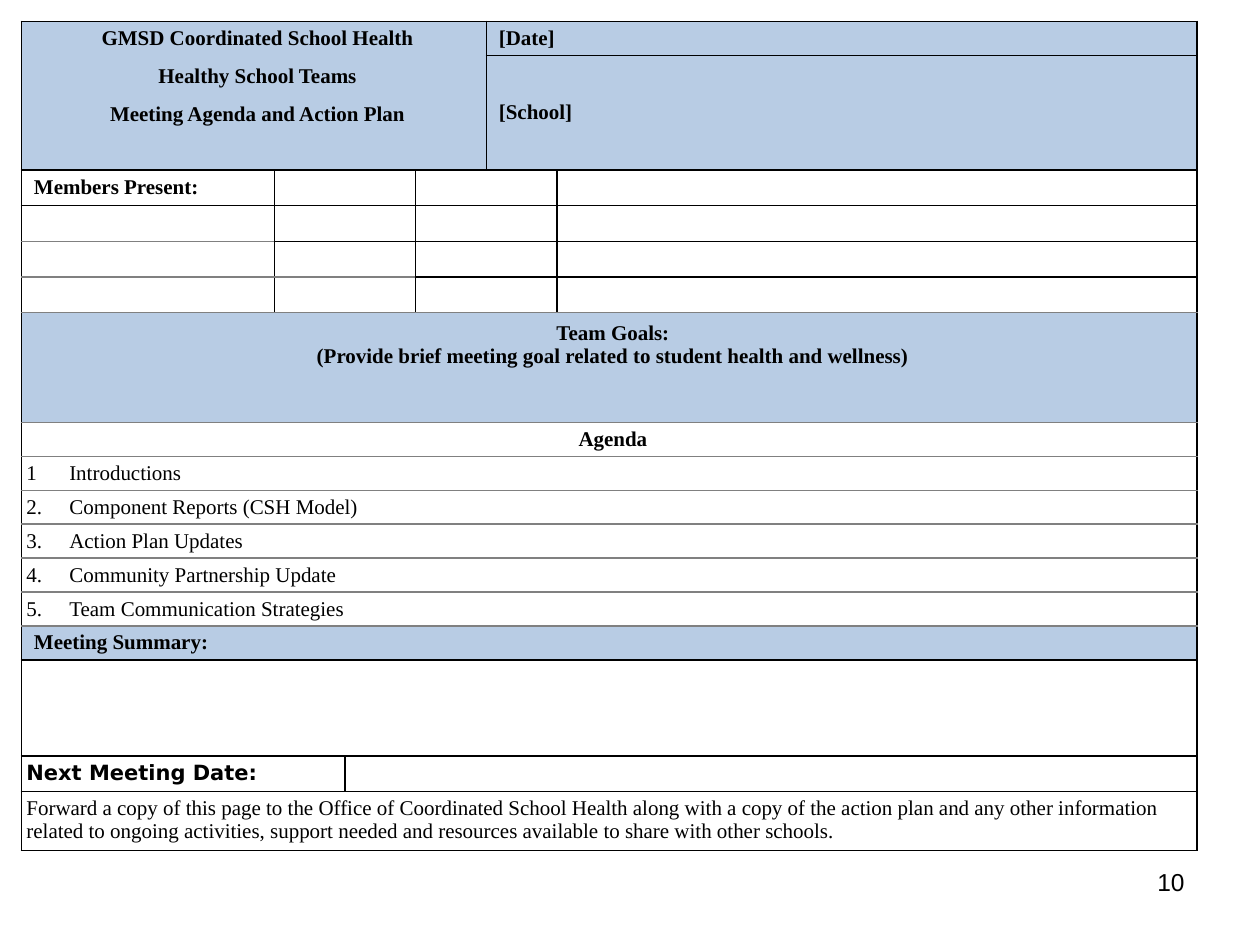
from lxml import etree
from pptx import Presentation
from pptx.dml.color import RGBColor
from pptx.enum.text import MSO_ANCHOR, PP_ALIGN
from pptx.oxml.ns import qn
from pptx.util import Inches, Pt

CENTER, RIGHT = PP_ALIGN.CENTER, PP_ALIGN.RIGHT
TOP, MIDDLE = MSO_ANCHOR.TOP, MSO_ANCHOR.MIDDLE
BLACK = RGBColor(0x00, 0x00, 0x00)
GRAY = RGBColor(0x80, 0x80, 0x80)
BLUE = RGBColor(0xB8, 0xCC, 0xE4)
SERIF = "Times New Roman"

TITLE = ["GMSD Coordinated School Health", "Healthy School Teams",
         "Meeting Agenda and Action Plan"]
GOALS = ["Team Goals:",
         "(Provide brief meeting goal related to student health and wellness)"]
AGENDA = ["1\tIntroductions", "2.\tComponent Reports (CSH Model)",
          "3.\tAction Plan Updates", "4.\tCommunity Partnership Update",
          "5.\tTeam Communication Strategies"]
FORWARD = ("Forward a copy of this page to the Office of Coordinated School Health "
           "along with a copy of the action plan and any other information related "
           "to ongoing activities, support needed and resources available to share "
           "with other schools.")

LEFT = 0.17
WIDTH = 9.33
PAD = 0.04
LINE_ROW = 0.27
TALL_ROWS = {1: 0.91, 6: 0.87, 14: 0.76, 16: 0.47}
ROWS, COLS = 17, 6
NAME_COL, NARROW_COL = 2.01, 0.56
FIRST_MEMBER, LAST_MEMBER = 2, 5
GOALS_ROW, AGENDA_ROW, SUMMARY_ROW = 6, 7, 13
GRAY_COLS = {3: 1, 4: 3, **{row: COLS for row in range(5, SUMMARY_ROW)}}

SPANS = [(0, 0, 2, 4), (0, 4, 1, 2), (1, 4, 1, 2), (15, 0, 1, 2), (15, 2, 1, 4)]
SPANS += [(row, col, 1, 2) for row in range(FIRST_MEMBER, LAST_MEMBER + 1)
          for col in (1, 3)]
SPANS += [(row, 0, 1, COLS) for row in (*range(GOALS_ROW, 15), 16)]

HEADING = dict(indent=0.06, bold=True)
CELLS = [
    (0, 0, TITLE, dict(HEADING, align=CENTER, anchor=TOP, before=4.3, after=4.3)),
    (0, 4, ["[Date]"], HEADING),
    (1, 4, ["[School]"], HEADING),
    (FIRST_MEMBER, 0, ["Members Present:"], HEADING),
    (GOALS_ROW, 0, GOALS, dict(HEADING, align=CENTER, anchor=TOP, top=0.07)),
    (AGENDA_ROW, 0, ["Agenda"], dict(HEADING, align=CENTER)),
    (SUMMARY_ROW, 0, ["Meeting Summary:"], dict(HEADING, anchor=TOP)),
    (15, 0, ["Next Meeting Date:"], dict(bold=True, font="DejaVu Sans", anchor=TOP)),
    (16, 0, [FORWARD], dict(anchor=TOP, before=2.9)),
]
CELLS += [(AGENDA_ROW + i, 0, [item], dict(indent=0.34, hanging=True))
          for i, item in enumerate(AGENDA, 1)]
BLUE_CELLS = {(0, 0), (0, 4), (1, 4), (GOALS_ROW, 0), (SUMMARY_ROW, 0)}


def add_run(p, text, font, size, bold=False):
    r = p.add_run()
    r.text = text
    r.font.name = font
    r.font.size = Pt(size)
    r.font.bold = bold
    r.font.color.rgb = BLACK


def write_cell(cell, lines, indent=0, hanging=False, bold=False, font=SERIF,
               align=None, anchor=MIDDLE, top=PAD, before=0, after=0):
    cell.vertical_anchor = anchor
    cell.margin_top = Inches(top)
    tf = cell.text_frame
    for i, line in enumerate(lines):
        p = tf.add_paragraph() if i else tf.paragraphs[0]
        p.alignment = align
        p.space_before, p.space_after = Pt(before), Pt(after)
        pPr = p._p.get_or_add_pPr()
        pPr.set("marL", str(Inches(indent)))
        pPr.set("indent", str(-Inches(indent) if hanging else 0))
        add_run(p, line, font, 12, bold)


def line_color(row, col):
    return GRAY if col < GRAY_COLS.get(row, 0) else BLACK


def format_cell(cell, row, col):
    cell.margin_left = cell.margin_right = Inches(PAD)
    cell.margin_top = cell.margin_bottom = Inches(PAD)
    end = etree.SubElement(cell.text_frame.paragraphs[0]._p, qn("a:endParaRPr"))
    end.set("sz", "1200")
    tcPr = cell._tc.get_or_add_tcPr()
    borders = {"lnL": BLACK, "lnR": BLACK,
               "lnT": line_color(row - 1, col), "lnB": line_color(row, col)}
    for tag, color in borders.items():
        ln = etree.SubElement(tcPr, qn("a:" + tag), w=str(Pt(1)))
        fill = etree.SubElement(ln, qn("a:solidFill"))
        etree.SubElement(fill, qn("a:srgbClr"), val=str(color))
    if (row, col) in BLUE_CELLS:
        cell.fill.solid()
        cell.fill.fore_color.rgb = BLUE
    else:
        cell.fill.background()


prs = Presentation()
prs.slide_width, prs.slide_height = Inches(10), Inches(7.5)
s = prs.slides.add_slide(prs.slide_layouts[6])

heights = [TALL_ROWS.get(row, LINE_ROW) for row in range(ROWS)]
widths = [NAME_COL] + [NARROW_COL] * 4
widths.append(WIDTH - sum(widths))
table = s.shapes.add_table(ROWS, COLS, Inches(LEFT), Inches(LEFT),
                           Inches(WIDTH), Inches(sum(heights))).table
table.first_row = table.horz_banding = False
for table_row, height in zip(table.rows, heights):
    table_row.height = Inches(height)
for column, width in zip(table.columns, widths):
    column.width = Inches(width)
for row in range(ROWS):
    for col in range(COLS):
        format_cell(table.cell(row, col), row, col)
for row, col, down, across in SPANS:
    table.cell(row, col).merge(table.cell(row + down - 1, col + across - 1))
for row, col, lines, style in CELLS:
    write_cell(table.cell(row, col), lines, **style)

page = s.shapes.add_textbox(Inches(7.17), Inches(6.83), Inches(2.33), Inches(0.52))
page.text_frame.word_wrap = True
p = page.text_frame.paragraphs[0]
p.alignment = RIGHT
add_run(p, "10", "Arial", 14)

prs.save("out.pptx")
